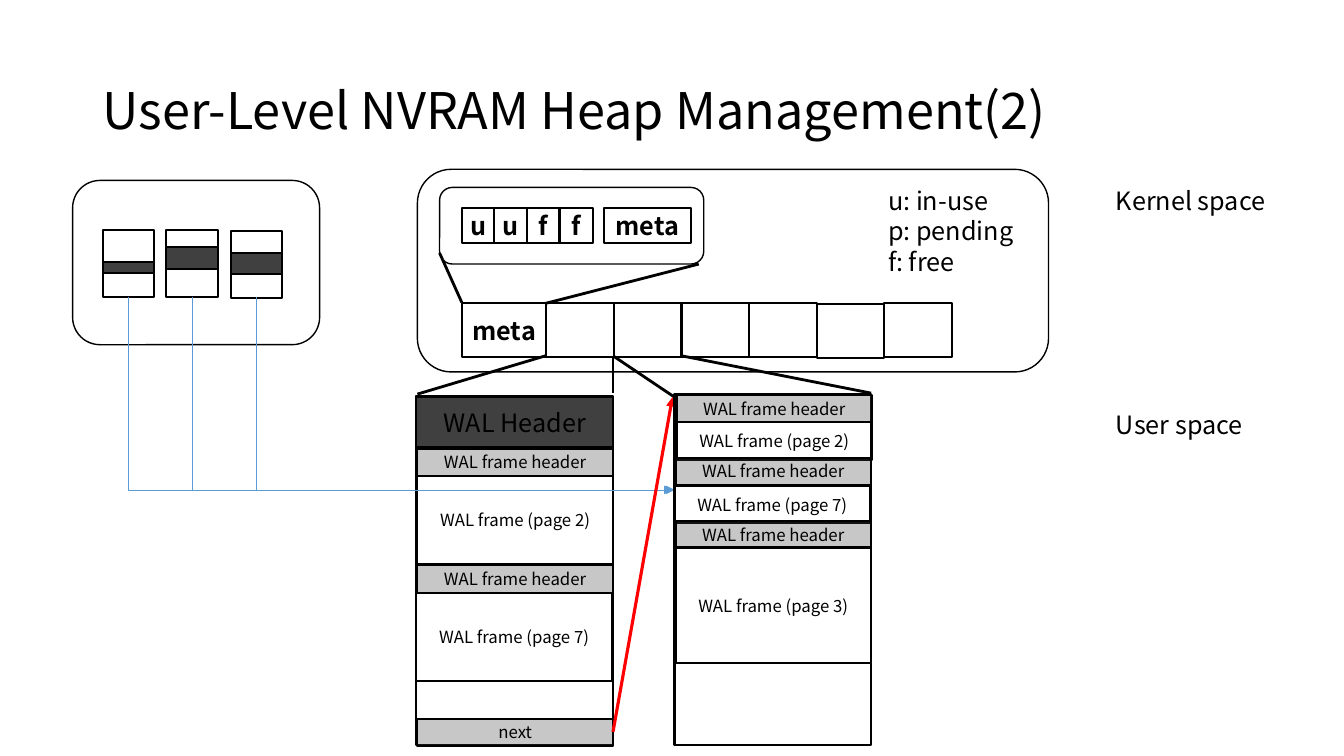
from dataclasses import dataclass
from typing import Optional

import lxml.etree
import pptx
import pptx.dml.color
import pptx.enum.shapes
import pptx.enum.text
import pptx.oxml.ns
import pptx.util

Inches = pptx.util.Inches
SHAPE = pptx.enum.shapes.MSO_SHAPE
CONNECTOR = pptx.enum.shapes.MSO_CONNECTOR
ALIGN = pptx.enum.text.PP_ALIGN
ANCHOR = pptx.enum.text.MSO_ANCHOR
AUTO = pptx.enum.text.MSO_AUTO_SIZE
qn = pptx.oxml.ns.qn


@dataclass(frozen=True)
class Theme:
    font: str = "Noto Sans CJK KR"
    black: str = "000000"
    white: str = "FFFFFF"
    dark: str = "404040"
    blue: str = "5B9BD5"
    red: str = "FF0000"
    title: float = 36
    body: float = 18
    small: float = 12
    thin: float = 1
    border: float = 1.5
    header_alpha: int = 29


THEME = Theme()


@dataclass(frozen=True)
class Box:
    x: float
    y: float
    w: float
    h: float
    text: str = ""
    fill: Optional[str] = None
    size: float = THEME.small
    bold: bool = False
    alpha: int = 100
    rounded: bool = False


@dataclass(frozen=True)
class Line:
    x1: float
    y1: float
    x2: float
    y2: float
    color: str = THEME.black
    width: float = 2
    arrow: bool = False
    bent: bool = False


def rgb(color: str) -> pptx.dml.color.RGBColor:
    return pptx.dml.color.RGBColor.from_string(color)


def apply(target, values: dict) -> None:
    for name, value in values.items():
        setattr(target, name, value)


def write(tf, text: str, size: float, align, bold: bool = False, spacing: float = 1) -> None:
    for i, line in enumerate(text.split("\n")):
        p = tf.add_paragraph() if i else tf.paragraphs[0]
        apply(p, {"alignment": align, "line_spacing": spacing})
        r = p.add_run()
        r.text = line
        apply(r.font, {"name": THEME.font, "size": pptx.util.Pt(size), "bold": bold})
        r.font.color.rgb = rgb(THEME.black)


def draw_box(s, box: Box) -> None:
    kind = SHAPE.ROUNDED_RECTANGLE if box.rounded else SHAPE.RECTANGLE
    sp = s.shapes.add_shape(kind, *map(Inches, (box.x, box.y, box.w, box.h)))
    sp.shadow.inherit = False
    if box.fill:
        sp.fill.solid()
        sp.fill.fore_color.rgb = rgb(box.fill)
        if box.alpha < 100:
            color = sp._element.spPr.find(qn("a:solidFill")).find(qn("a:srgbClr"))
            lxml.etree.SubElement(color, qn("a:alpha"), val=str(box.alpha * 1000))
    else:
        sp.fill.background()
    sp.line.color.rgb = rgb(THEME.black)
    sp.line.width = pptx.util.Pt(THEME.thin if box.rounded else THEME.border)
    if box.text:
        apply(sp.text_frame, {"margin_left": 0, "margin_right": 0, "margin_top": 0,
                              "margin_bottom": 0, "word_wrap": True,
                              "vertical_anchor": ANCHOR.MIDDLE})
        write(sp.text_frame, box.text, box.size, ALIGN.CENTER, box.bold)


def draw_line(s, line: Line) -> None:
    ends = (line.x1, line.y1, line.x2, line.y2)
    if line.bent:
        # Down then right: a quarter-turned frame around the same centre
        w, h = line.y2 - line.y1, line.x2 - line.x1
        left, top = (line.x1 + line.x2 - w) / 2, (line.y1 + line.y2 - h) / 2
        ends = (left, top, left + w, top + h)
    kind = CONNECTOR.ELBOW if line.bent else CONNECTOR.STRAIGHT
    cx = s.shapes.add_connector(kind, *map(Inches, ends))
    cx.line.color.rgb = rgb(line.color)
    cx.line.width = pptx.util.Pt(line.width)
    props = cx._element.spPr
    if line.bent:
        props.find(qn("a:prstGeom")).set("prst", "bentConnector2")
        xfrm = props.find(qn("a:xfrm"))
        xfrm.set("rot", str(270 * 60000))
        xfrm.set("flipH", "1")
    if line.arrow:
        lxml.etree.SubElement(props.find(qn("a:ln")), qn("a:tailEnd"), type="triangle")
    lxml.etree.SubElement(props, qn("a:effectLst"))


def draw_label(s, x: float, y: float, w: float, h: float, text: str) -> None:
    tf = s.shapes.add_textbox(*map(Inches, (x, y, w, h))).text_frame
    apply(tf, {"word_wrap": True, "auto_size": AUTO.SHAPE_TO_FIT_TEXT})
    write(tf, text, THEME.body, ALIGN.LEFT)


def cell(x: float, y: float, w: float, h: float, text: str = "") -> Box:
    return Box(x, y, w, h, text, THEME.white, THEME.body, True)


def header(x: float, y: float, text: str = "WAL frame header") -> Box:
    return Box(x, y, 1.94, 0.27, text, THEME.dark, alpha=THEME.header_alpha)


def frame(x: float, y: float, h: float, page: int) -> Box:
    return Box(x, y, 1.94, h, f"WAL frame (page {page})")


def main() -> None:
    prs = pptx.Presentation()
    apply(prs, {"slide_width": Inches(13.33), "slide_height": Inches(7.5)})
    s = prs.slides.add_slide(prs.slide_layouts[5])

    # Title
    title = s.shapes.title
    apply(title, {"left": Inches(0.92), "top": Inches(0.4),
                  "width": Inches(11.5), "height": Inches(1.45)})
    apply(title.text_frame, {"vertical_anchor": ANCHOR.MIDDLE, "word_wrap": True})
    write(title.text_frame, "User-Level NVRAM Heap Management(2)", THEME.title,
          ALIGN.LEFT, spacing=0.9)

    # Cached pages, each with its dirty band
    cache = [Box(0.72, 1.79, 2.45, 1.63, rounded=True)]
    for x, y, band_y, band_h in ((1.02, 2.28, 2.6, 0.11), (1.65, 2.28, 2.45, 0.22),
                                 (2.29, 2.29, 2.51, 0.21)):
        cache += [Box(x, y, 0.51, 0.67, fill=THEME.white),
                  Box(x, band_y, 0.51, band_h, fill=THEME.dark)]

    # Kernel heap: block states and the row of blocks
    heap = [Box(4.14, 1.68, 6.26, 2.01, rounded=True),
            Box(4.36, 1.86, 2.62, 0.76, rounded=True)]
    heap += [cell(4.58 + i * 0.97 / 3, 2.06, 0.33, 0.35, state)
             for i, state in enumerate("uuff")]
    heap += [cell(5.99, 2.06, 0.86, 0.35, "meta"), cell(4.58, 3.01, 0.84, 0.53, "meta")]
    heap += [cell(5.42 + i * 0.67, 3.02 if i == 4 else 3.01, 0.67, 0.53) for i in range(6)]

    # First user block
    first_block = [
        Box(4.13, 3.93, 1.95, 3.46, fill=THEME.white),
        Box(4.13, 3.94, 1.95, 0.5, "WAL Header", THEME.dark, THEME.body),
        header(4.14, 4.45), frame(4.14, 4.72, 0.88, 2),
        header(4.14, 5.61), frame(4.13, 5.88, 0.88, 7),
        header(4.14, 7.13, "next"),
    ]

    # Second user block
    second_block = [
        Box(6.69, 3.91, 1.95, 3.48),
        header(6.71, 3.92), frame(6.71, 4.19, 0.37, 2),
        header(6.7, 4.54), frame(6.69, 4.82, 0.37, 7),
        header(6.7, 5.17), frame(6.7, 5.43, 1.15, 3),
    ]

    # Zoom lines between levels, then the pointers
    zoom_lines = [
        Line(4.36, 2.51, 4.58, 3), Line(6.93, 2.62, 5.41, 3.01),
        Line(5.41, 3.53, 4.14, 3.91), Line(6.08, 3.9, 6.08, 3.53),
        Line(6.69, 3.94, 6.08, 3.53), Line(8.64, 3.9, 6.76, 3.53),
    ]
    pointers = [Line(x, 2.95, end, 4.86, THEME.blue, 0.5, True, True)
                for x, end in ((1.27, 6.69), (1.91, 6.67), (2.54, 6.67))]
    pointers.append(Line(6.08, 7.26, 6.67, 3.94, THEME.red, 2.25, True))

    # Back to front
    for item in cache + heap + zoom_lines + first_block + pointers + second_block:
        draw = draw_box if isinstance(item, Box) else draw_line
        draw(s, item)

    # Legend and space labels
    draw_label(s, 8.71, 1.79, 1.69, 1.01, "u: in-use\np: pending\nf: free")
    for y, text in ((1.79, "Kernel space"), (4.01, "User space")):
        draw_label(s, 10.97, y, 1.71, 0.4, text)

    prs.save("out.pptx")


if __name__ == "__main__":
    main()
